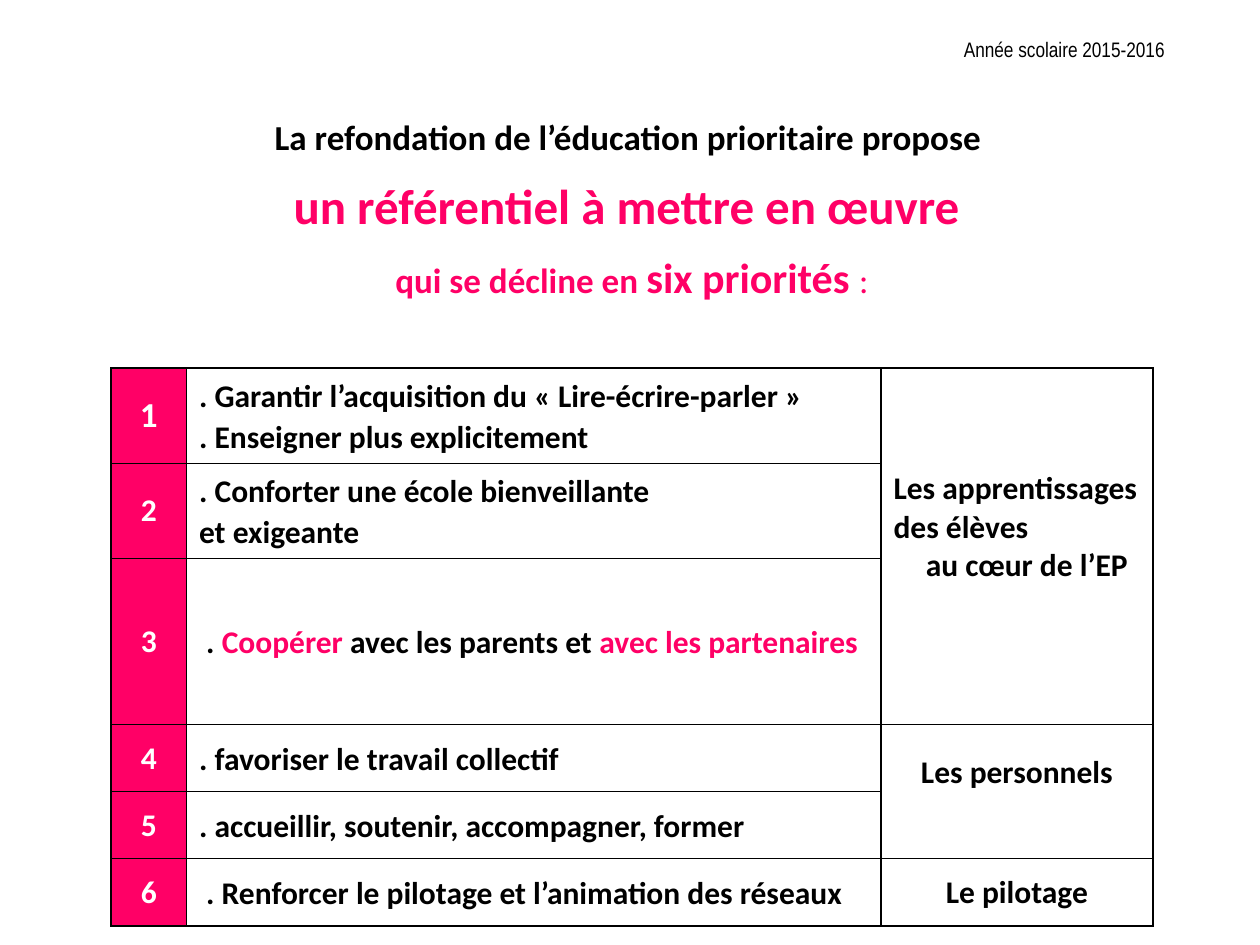
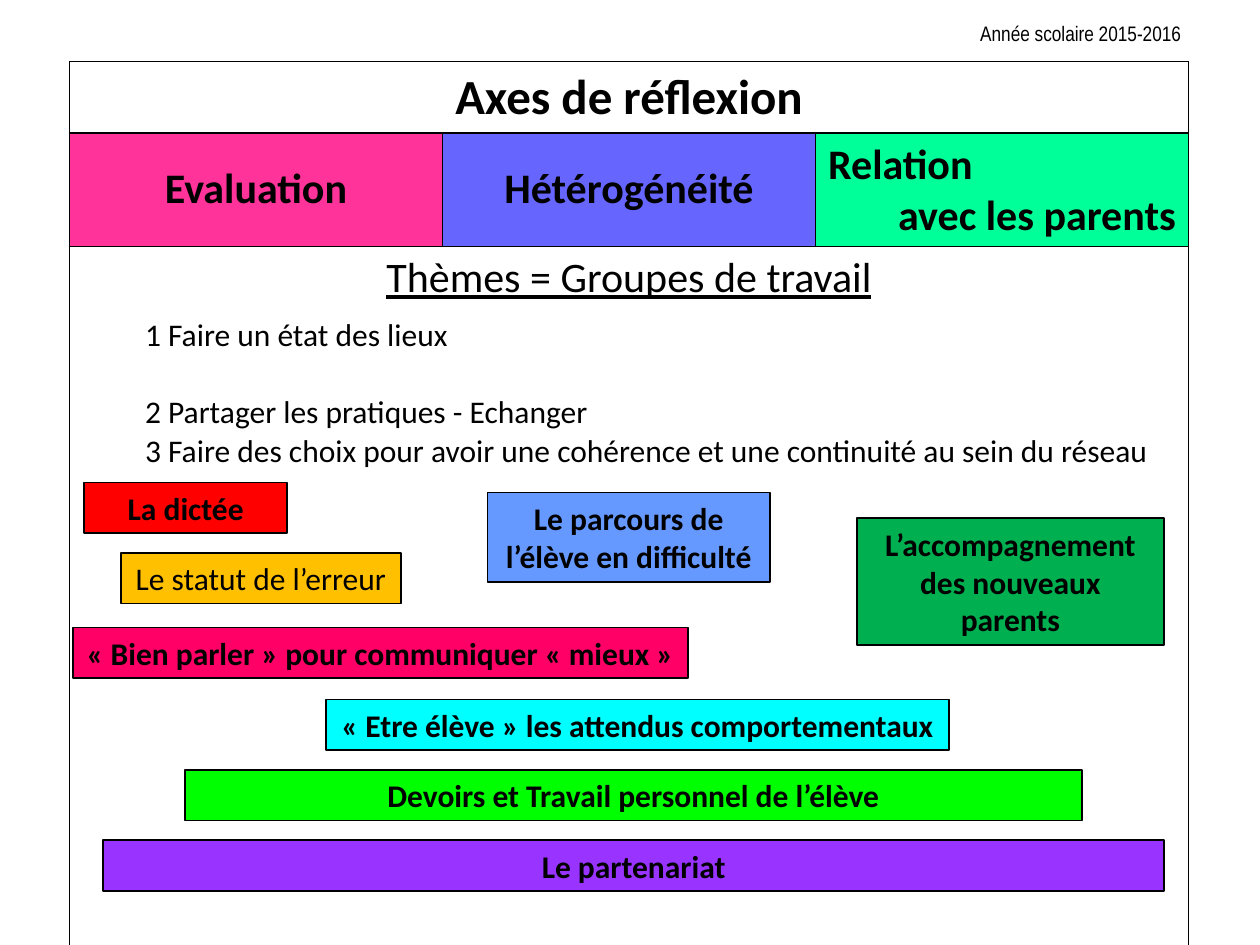
"""Build two slides on the priorities and lines of thought for priority education."""
from lxml.etree import SubElement
from pptx import Presentation
from pptx.dml.color import RGBColor
from pptx.enum.shapes import MSO_SHAPE
from pptx.enum.text import MSO_ANCHOR, PP_ALIGN
from pptx.oxml import parse_xml
from pptx.oxml.ns import nsdecls, qn
from pptx.util import Cm, Pt

HUES = {
    "black": "000000", "white": "FFFFFF", "rose": "FF0066", "pink": "FF3399",
    "iris": "6666FF", "mint": "00FF99", "red": "FF0000", "sky": "6699FF",
    "lime": "00FF00", "cyan": "00FFFF", "gold": "FFC000", "green": "00B050",
    "plum": "9933FF",
}
LEFT, MID, RIGHT = PP_ALIGN.LEFT, PP_ALIGN.CENTER, PP_ALIGN.RIGHT


def write(frame, lines, size=18, hue="black", bold=True, font="Calibri", space=1):
    """Fill a frame with (align, run, run...) lines; a run is text or (text, changes)."""
    for spot, (align, *runs) in enumerate(lines):
        para = frame.add_paragraph() if spot else frame.paragraphs[0]
        para.alignment = align
        para.line_spacing = space
        for item in runs:
            text, plus = (item, {}) if isinstance(item, str) else item
            run = para.add_run()
            run.text = text
            run.font.name = font
            run.font.size = Pt(plus.get("size", size))
            run.font.bold = plus.get("bold", bold)
            run.font.color.rgb = RGBColor.from_string(HUES[plus.get("hue", hue)])


def grid(slide, left, top, cols, rows, sides):
    """Add a plain table whose rows have lines on the given sides."""
    table = slide.shapes.add_table(
        len(rows), len(cols), Cm(left), Cm(top), Cm(sum(cols)), Cm(sum(rows))).table
    table.first_row = table.horz_banding = False
    for col, wide in zip(table.columns, cols):
        col.width = Cm(wide)
    for row, high, seen in zip(table.rows, rows, sides):
        row.height = Cm(high)
        for cell in row.cells:
            cell.fill.background()
            cell.vertical_anchor = MSO_ANCHOR.MIDDLE
            props = cell._tc.get_or_add_tcPr()
            for spot, side in enumerate("LRTB"):
                ink = (f'<a:solidFill><a:srgbClr val="{HUES["black"]}"/></a:solidFill>'
                       if side in seen else "<a:noFill/>")
                props.insert(spot, parse_xml(
                    f'<a:ln{side} {nsdecls("a")} w="12700">{ink}</a:ln{side}>'))
    return table


deck = Presentation()
deck.slide_width, deck.slide_height = Cm(25.4), Cm(19.05)
first = deck.slides.add_slide(deck.slide_layouts[1])
second = deck.slides.add_slide(deck.slide_layouts[6])

for slide, left, top in ((first, 19.18, 0.61), (second, 19.51, 0.28)):
    year = slide.shapes.add_textbox(Cm(left), Cm(top), Cm(5.89), Cm(0.76))
    year.text_frame.word_wrap = True
    write(year.text_frame, [(LEFT, "Année scolaire 2015-2016")],
          size=12, bold=False, font="Arial Narrow")

head = first.shapes.title
head.element.getparent().remove(head.element)
body = first.placeholders[1]
body.left, body.top, body.width, body.height = Cm(2.24), Cm(2.21), Cm(21), Cm(15.65)
write(body.text_frame, [
    (MID, ("La refondation de l’éducation prioritaire propose ", {"hue": "black"})),
    (MID, ("un référentiel à mettre en œuvre ", {"size": 28})),
    (MID, "qui se décline en ", ("six priorités ", {"size": 24}), (":", {"bold": False})),
], size=20, hue="rose")
for para in body.text_frame.paragraphs:
    para.space_before = Pt(10)
    props = para._p.get_or_add_pPr()
    props.set("marL", "0")
    props.set("indent", "0")
    SubElement(props, qn("a:buNone"))

goals = [
    [(LEFT, ". Garantir l’acquisition du « Lire-écrire-parler » "),
     (LEFT, ". Enseigner plus explicitement")],
    [(LEFT, ". Conforter une école bienveillante"), (LEFT, "et exigeante")],
    [(LEFT, " . ", ("Coopérer", {"hue": "rose"}), " avec les parents et ",
      ("avec les partenaires", {"hue": "rose"}))],
    [(LEFT, ". favoriser le travail collectif")],
    [(LEFT, ". accueillir, soutenir, accompagner, former")],
    [(LEFT, " . Renforcer le pilotage et l’animation des réseaux")],
]
table = grid(first, 2.24, 7.42, [1.52, 14, 5.48],
             [1.92, 1.92, 3.35, 1.35, 1.35, 1.36], ["LRTB"] * 6)
for row, goal in enumerate(goals):
    mark = table.cell(row, 0)
    mark.fill.solid()
    mark.fill.fore_color.rgb = RGBColor.from_string(HUES["rose"])
    write(mark.text_frame, [(MID, str(row + 1))], size=18 if row else 20, hue="white")
    write(table.cell(row, 1).text_frame, goal, space=1.07)

fields = [
    (0, 2, 0.9, [(LEFT, "Les apprentissages des élèves"), (MID, "au cœur de l’EP")]),
    (3, 4, 0.9, [(MID, "Les personnels")]),
    (5, 5, 0.13, [(MID, "Le pilotage")]),
]
for start, end, foot, lines in fields:
    cell = table.cell(start, 2)
    if end > start:
        cell.merge(table.cell(end, 2))
    cell.margin_bottom = Cm(foot)
    write(cell.text_frame, lines)
core = table.cell(0, 2).text_frame.paragraphs[1]
core._p.get_or_add_pPr().set("marL", str(Cm(0.4)))

table = grid(second, 1.4, 1.24, [7.52] * 3, [1.43, 2.28, 1.29, 3.33, 9.48],
             ["LRTB", "LRTB", "LRT", "LR", "LR"])
for row in (0, 2, 3, 4):
    table.cell(row, 0).merge(table.cell(row, 2))
write(table.cell(0, 0).text_frame, [(MID, "Axes de réflexion")], size=28)
axes = [
    ("pink", [(MID, "Evaluation")]),
    ("iris", [(MID, "Hétérogénéité")]),
    ("mint", [(LEFT, "Relation"), (RIGHT, "avec les parents")]),
]
for col, (hue, lines) in enumerate(axes):
    cell = table.cell(1, col)
    cell.fill.solid()
    cell.fill.fore_color.rgb = RGBColor.from_string(HUES[hue])
    write(cell.text_frame, lines, size=24)

theme = table.cell(2, 0).text_frame
write(theme, [(MID, "Thèmes = Groupes de travail")], size=24, bold=False)
theme.paragraphs[0].runs[0].font.underline = True
steps = table.cell(3, 0)
steps.vertical_anchor = MSO_ANCHOR.TOP
write(steps.text_frame, [
    (LEFT, "1 Faire un état des lieux"),
    (LEFT, "2 Partager les pratiques - Echanger"),
    (LEFT, "3 Faire des choix pour avoir une cohérence et une continuité au sein du réseau"),
], bold=False)
steps.text_frame.paragraphs[0].space_after = Pt(22)
for para in steps.text_frame.paragraphs:
    para._p.get_or_add_pPr().set("marL", str(Cm(1.27)))

groups = [
    ("La dictée", "red", 1.7, 9.73, 4.09, 1.02),
    ("Le parcours de l’élève en difficulté", "sky", 9.83, 9.93, 5.69, 1.8),
    ("Devoirs et Travail personnel de l’élève", "lime", 3.73, 15.52, 18.08, 1.02),
    ("« Etre élève » les attendus comportementaux", "cyan", 6.58, 14.1, 12.55, 1.02),
    ("« Bien parler » pour communiquer « mieux »", "rose", 1.47, 12.65, 12.4, 1.02),
    ("Le statut de l’erreur", "gold", 2.44, 11.15, 5.64, 1.02),
    ("L’accompagnement des nouveaux parents", "green", 17.27, 10.44, 6.2, 2.57),
    ("Le partenariat", "plum", 2.08, 16.94, 21.39, 1.02),
]
for text, hue, left, top, wide, high in groups:
    box = second.shapes.add_shape(MSO_SHAPE.RECTANGLE, Cm(left), Cm(top), Cm(wide), Cm(high))
    box.shadow.inherit = False
    box.fill.solid()
    box.fill.fore_color.rgb = RGBColor.from_string(HUES[hue])
    box.line.color.rgb = RGBColor.from_string(HUES["black"])
    box.line.width = Pt(1)
    box.text_frame.word_wrap = True
    write(box.text_frame, [(MID, text)], bold=hue != "gold")

deck.save("out.pptx")
